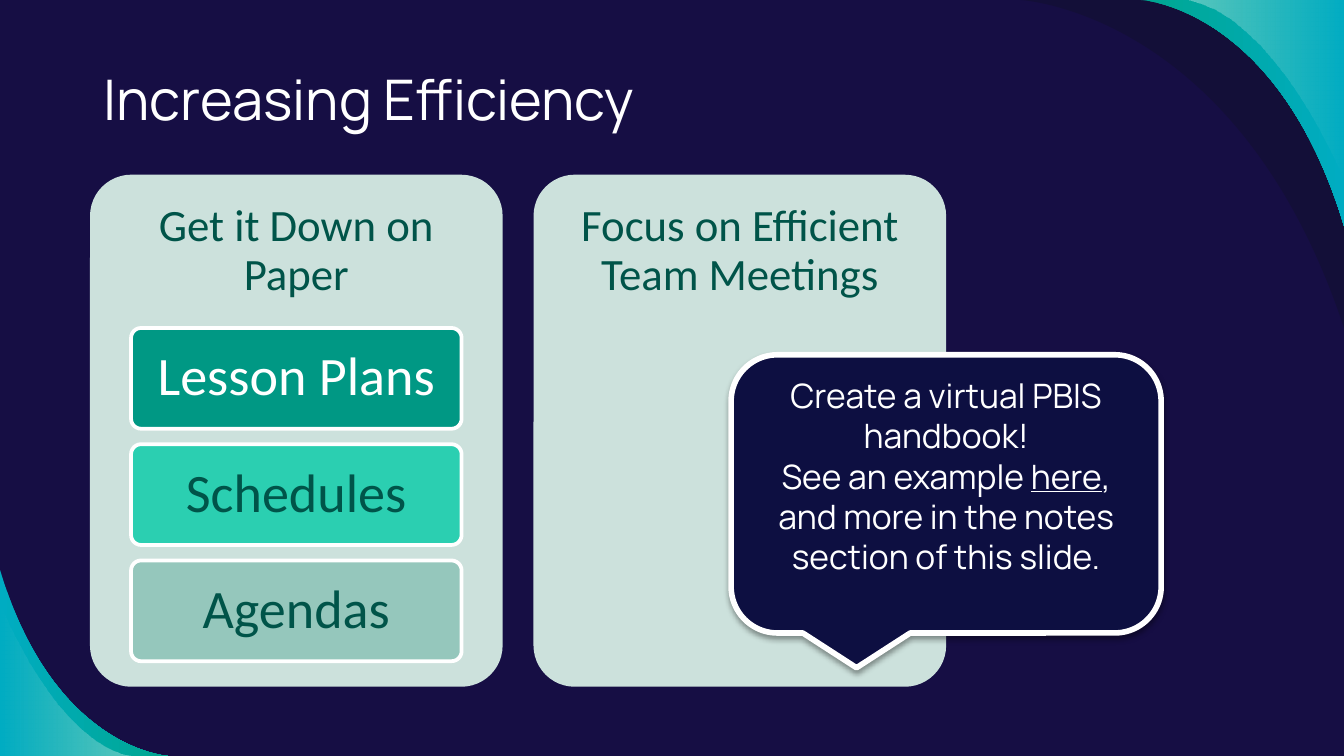
"""Build the Increasing Efficiency slide."""
import pptx
import pptx.util
import pptx.dml.color
import pptx.enum.shapes
import pptx.enum.text
import pptx.oxml.ns
import lxml.etree

deck = pptx.Presentation()
deck.slide_width = pptx.util.Inches(10)
unit = deck.slide_width // 100
deck.slide_height = int(unit * 56.25)
slide = deck.slides.add_slide(deck.slide_layouts[5])
shapes = slide.shapes
kind = pptx.enum.shapes.MSO_SHAPE
align = pptx.enum.text.PP_ALIGN
anchor = pptx.enum.text.MSO_ANCHOR
qn = pptx.oxml.ns.qn


def tint(part, code):
    part.rgb = pptx.dml.color.RGBColor.from_string(code)


def write(para, size, face, code, side=align.CENTER):
    para.alignment = side
    para.font.size = pptx.util.Pt(size)
    para.font.name = face
    tint(para.font.color, code)


slide.background.fill.solid()
tint(slide.background.fill.fore_color, "160E44")

teal = ["00A791", "00ACC2"]
white = ["FFFFFF", "FFFFFF"]
low, high = (0, 56.25), (100, 0)
arcs = [
    ((12.5, 56.25), (12.5, 56.25), (4, 55.8), (0, 42.4), low, teal[::-1], []),
    ((0, 45), (0, 45), (4.2, 55.6), (9.9, 56.25), low, white, [0, 36]),
    ((100, 24.4), (92.2, 0.8), (75.9, 0), (75.9, 0), high, ["12102F"], [54]),
    ((84.9, 0), (84.9, 0), (95.1, 0.5), (100, 16.8), high, teal, []),
    ((100, 13.5), (100, 13.5), (94.9, 0.8), (88, 0), high, white, [36, 0]),
]
for *spots, codes, alphas in arcs:
    dots = [(int(unit * x), int(unit * y)) for x, y in spots]
    pen = shapes.build_freeform(*dots[0])
    pen.add_line_segments(dots[1:], close=True)
    arc = pen.convert_to_shape()
    lines = list(arc.element.spPr.iter(qn("a:lnTo")))[:3]
    curve = lxml.etree.Element(qn("a:cubicBezTo"))
    lines[0].addprevious(curve)
    for line in lines:
        curve.append(line[0])
        line.getparent().remove(line)
    arc.shadow.inherit = False
    arc.line.fill.background()
    if len(codes) == 1:
        arc.fill.solid()
        tint(arc.fill.fore_color, codes[0])
    else:
        arc.fill.gradient()
        arc.fill.gradient_angle = 0
        for stop, code in zip(arc.fill.gradient_stops, codes):
            tint(stop.color, code)
    for mark, alpha in zip(arc.element.spPr.iter(qn("a:srgbClr")), alphas):
        lxml.etree.SubElement(mark, qn("a:alpha"), val=str(alpha * 1000))

title = shapes.title
title.left, title.top, title.width, title.height = [
    int(unit * n) for n in (6.7, 3.8, 76.9, 6.9)]
frame = title.text_frame
frame.text = "Increasing Efficiency"
frame.auto_size = pptx.enum.text.MSO_AUTO_SIZE.NONE
frame.vertical_anchor = anchor.TOP
frame.margin_left = frame.margin_top = frame.margin_right = frame.margin_bottom = unit
write(frame.paragraphs[0], 30, "Manrope", "FFFFFF", align.LEFT)

top, wide, tall, head = 13, 30.7, 38.1, 11.4
boxes = []
for col, text in enumerate(["Get it Down on Paper", "Focus on Efficient Team Meetings"]):
    left = 6.7 + col * 33
    boxes.append((left, top, wide, tall, "CCE1DC", 0, "", 24, "005449"))
    boxes.append((left, top, wide, head, None, 0, text, 24, "005449"))
tiles = [("Lesson Plans", "009884", "FFFFFF"), ("Schedules", "2BCFB1", "005449"),
         ("Agendas", "95C7BC", "005449")]
for row, (text, back, ink) in enumerate(tiles):
    boxes.append((9.75, top + head + row * 8.65, 24.6, 7.5, back, 2, text, 29, ink))

for *place, back, edge, text, size, ink in boxes:
    area = [int(unit * n) for n in place]
    if back:
        box = shapes.add_shape(kind.ROUNDED_RECTANGLE, *area)
        box.adjustments[0] = 0.1
        box.shadow.inherit = False
        box.fill.solid()
        tint(box.fill.fore_color, back)
        if edge:
            tint(box.line.color, "FFFFFF")
            box.line.width = pptx.util.Pt(edge)
        else:
            box.line.fill.background()
    else:
        box = shapes.add_textbox(*area)
    if text:
        frame = box.text_frame
        frame.text = text
        frame.word_wrap = True
        frame.vertical_anchor = anchor.MIDDLE
        frame.margin_left = frame.margin_right = int(unit * (0.8 if back else 1))
        frame.paragraphs[0].line_spacing = 0.9
        write(frame.paragraphs[0], size, "Calibri", ink)

note = shapes.add_shape(kind.ROUNDED_RECTANGULAR_CALLOUT,
                        *[int(unit * n) for n in (54.4, 26.4, 32, 20.7)])
note.fill.solid()
tint(note.fill.fore_color, "0D0F41")
tint(note.line.color, "FFFFFF")
note.line.width = pptx.util.Pt(3)
note.shadow.inherit = False
glow = note.element.spPr.find(qn("a:effectLst"))
shade = lxml.etree.SubElement(glow, qn("a:outerShdw"), blurRad=str(pptx.util.Pt(3.1)),
                              dist=str(pptx.util.Pt(1.6)), dir="5400000", rotWithShape="0")
black = lxml.etree.SubElement(shade, qn("a:srgbClr"), val="000000")
lxml.etree.SubElement(black, qn("a:alpha"), val="38000")

frame = note.text_frame
frame.word_wrap = True
frame.vertical_anchor = anchor.TOP
frame.text = "Create a virtual PBIS handbook!\nSee an example "
last = frame.paragraphs[1]
link = last.add_run()
link.text = "here"
link.font.underline = True
last.add_run().text = ", and more in the notes section of this slide."
for para in frame.paragraphs:
    write(para, 18, "Manrope", "FFFFFF")

deck.save("out.pptx")
